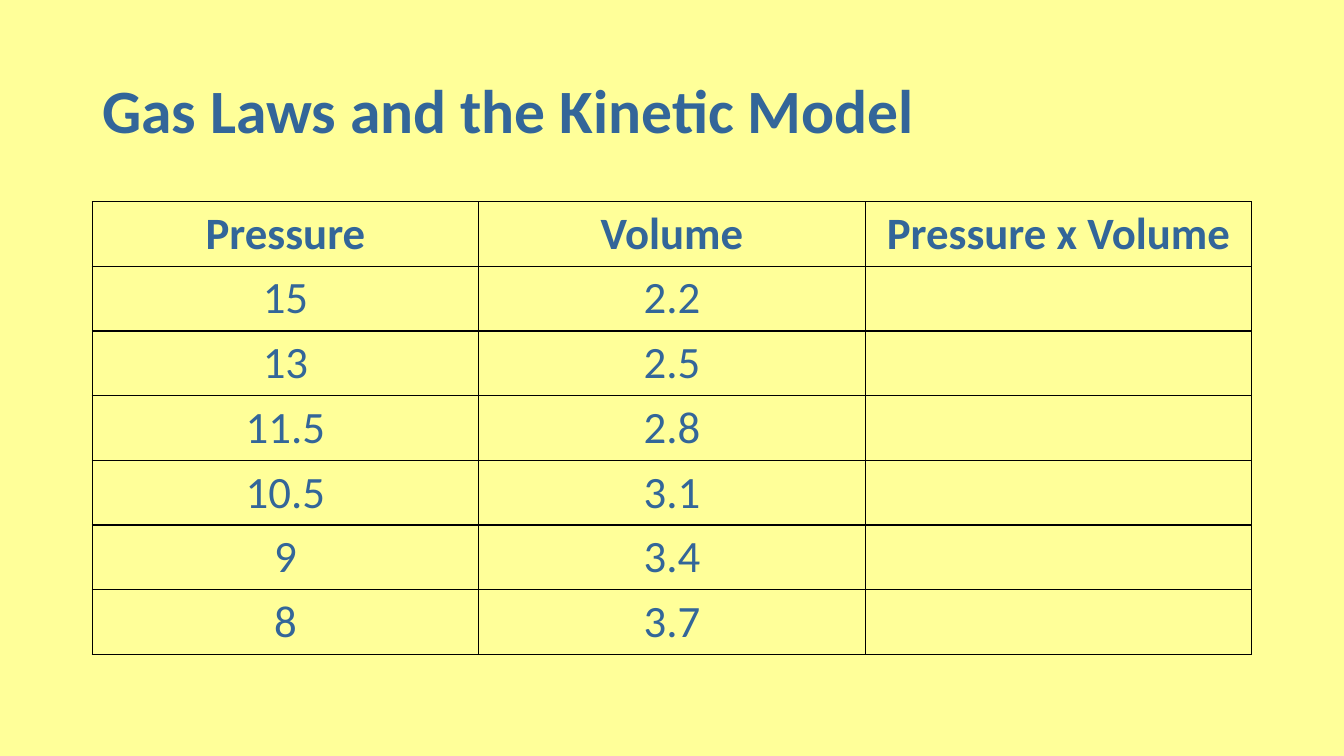
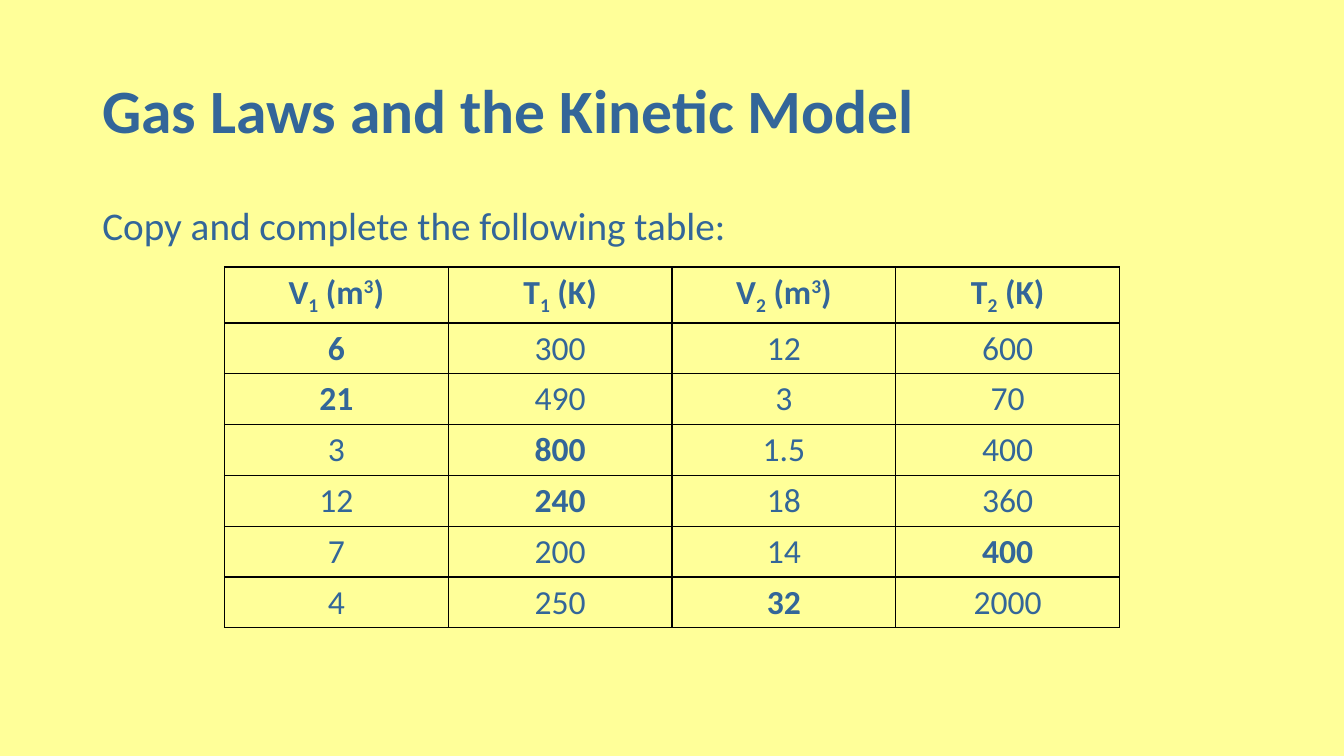
from itertools import product

from lxml import etree
from pptx import Presentation
from pptx.dml.color import RGBColor
from pptx.enum.text import MSO_ANCHOR, PP_ALIGN
from pptx.oxml.ns import qn
from pptx.util import Cm, Pt

CENTER = PP_ALIGN.CENTER
TOP, MIDDLE = MSO_ANCHOR.TOP, MSO_ANCHOR.MIDDLE

PAGE, INK, BORDER = "FFFF99", "336699", "000000"
FONT = "Calibri"
SLIDE_WIDTH, SLIDE_HEIGHT = Cm(33.87), Cm(19.05)
MARGIN, CONTENT_WIDTH = Cm(2.33), Cm(29.21)
BODY_TOP = Cm(5.08)

# In cells, "*" marks a bold answer, "_" a subscript digit, "^" a superscript digit.
TITLE = "Gas Laws and the Kinetic Model"
SLIDES = [
    {
        "rows": [
            ("Pressure", "Volume", "Pressure x Volume"),
            ("15", "2.2", ""),
            ("13", "2.5", ""),
            ("11.5", "2.8", ""),
            ("10.5", "3.1", ""),
            ("9", "3.4", ""),
            ("8", "3.7", ""),
        ],
        "size": 32, "top": BODY_TOP, "column": Cm(9.74),
        "header_height": Cm(1.63), "row_height": Cm(1.63),
    },
    {
        "instruction": "Copy and complete the following table:",
        "rows": [
            ("V_1 (m^3)", "T_1 (K)", "V_2 (m^3)", "T_2 (K)"),
            ("*6", "300", "12", "600"),
            ("*21", "490", "3", "70"),
            ("3", "*800", "1.5", "400"),
            ("12", "*240", "18", "360"),
            ("7", "200", "14", "*400"),
            ("4", "250", "*32", "2000"),
        ],
        "size": 24, "top": Cm(6.73), "column": Cm(5.64),
        "header_height": Cm(1.41), "row_height": Cm(1.28),
    },
]
BASELINES = {"_": "-25000", "^": "30000"}


def color(hex_value):
    return RGBColor.from_string(hex_value)


def set_font(paragraph, size, bold=False):
    font = paragraph.font
    font.name, font.size, font.bold = FONT, Pt(size), bold
    font.color.rgb = color(INK)


def add_text(slide, text, top, height, size, bold=False, anchor=TOP, space_before=0):
    frame = slide.shapes.add_textbox(MARGIN, top, CONTENT_WIDTH, height).text_frame
    frame.word_wrap = True
    frame.vertical_anchor = anchor
    paragraph = frame.paragraphs[0]
    paragraph.text = text
    paragraph.line_spacing = 0.9
    paragraph.space_before = Pt(space_before)
    set_font(paragraph, size, bold)


def add_marked_runs(paragraph, text):
    """Split text into runs, raising or lowering the digit after each mark."""
    pieces = [["", None]]
    marks = iter(text)
    for character in marks:
        if character in BASELINES:
            pieces += [[next(marks), BASELINES[character]], ["", None]]
        else:
            pieces[-1][0] += character
    for piece, baseline in pieces:
        if piece:
            run = paragraph.add_run()
            run.text = piece
            if baseline:
                run.font._element.set("baseline", baseline)


def set_borders(cell):
    properties = cell._tc.get_or_add_tcPr()
    for index, side in enumerate(("a:lnL", "a:lnR", "a:lnT", "a:lnB")):
        line = etree.Element(qn(side), w=str(Pt(1)))
        fill = etree.SubElement(line, qn("a:solidFill"))
        etree.SubElement(fill, qn("a:srgbClr"), val=BORDER)
        properties.insert(index, line)


def add_table(slide, rows, size, top, column, header_height, row_height):
    row_count, column_count = len(rows), len(rows[0])
    width = column * column_count
    height = header_height + row_height * (row_count - 1)
    left = (SLIDE_WIDTH - width) // 2
    table = slide.shapes.add_table(
        row_count, column_count, left, top, width, height).table
    table.first_row = table.horz_banding = False
    for table_column in table.columns:
        table_column.width = column
    for index, row in enumerate(table.rows):
        row.height = row_height if index else header_height
    for r, c in product(range(row_count), range(column_count)):
        cell, value = table.cell(r, c), rows[r][c]
        cell.fill.background()
        set_borders(cell)
        paragraph = cell.text_frame.paragraphs[0]
        paragraph.alignment = CENTER
        set_font(paragraph, size, bold=r == 0 or value.startswith("*"))
        add_marked_runs(paragraph, value.lstrip("*"))


def main():
    prs = Presentation()
    prs.slide_width, prs.slide_height = SLIDE_WIDTH, SLIDE_HEIGHT
    background = prs.slide_master.background.fill
    background.solid()
    background.fore_color.rgb = color(PAGE)
    for content in SLIDES:
        slide = prs.slides.add_slide(prs.slide_layouts[6])
        add_text(slide, TITLE, Cm(1.02), Cm(3.68), 44, bold=True, anchor=MIDDLE)
        if "instruction" in content:
            add_text(slide, content["instruction"], BODY_TOP, Cm(1.5), 28,
                     space_before=10)
        add_table(slide, **{key: value for key, value in content.items()
                            if key != "instruction"})
    prs.save("out.pptx")


if __name__ == "__main__":
    main()
